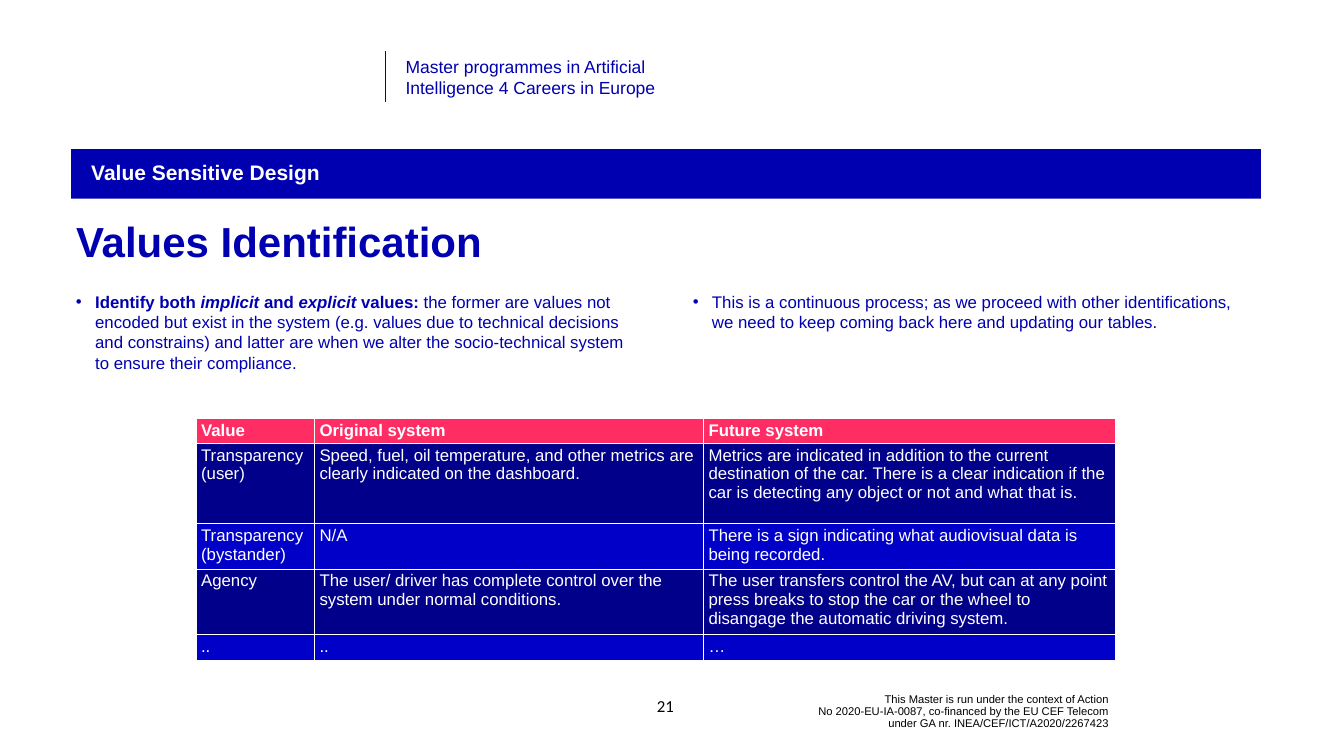
from lxml.etree import SubElement
from pptx import Presentation
from pptx.dml.color import RGBColor
from pptx.enum.shapes import MSO_CONNECTOR, MSO_SHAPE
from pptx.enum.text import MSO_ANCHOR, PP_ALIGN
from pptx.oxml.ns import qn
from pptx.util import Inches, Pt

NAVY, WHITE, BLACK, PINK = "0000B0", "FFFFFF", "000000", "FF2D64"
BANDS = ("00008A", "0100C8")
WIDTHS = (2.35, 7.72, 8.18)
HEIGHTS = (0.47, 1.59, 0.84, 1.23, 0.47)
ROWS = (
    ("Value", "Original system", "Future system"),
    ("Transparency (user)",
     "Speed, fuel, oil temperature, and other metrics are clearly indicated on the dashboard.",
     "Metrics are indicated in addition to the current destination of the car. There is a clear "
     "indication if the car is detecting any object or not and what that is."),
    ("Transparency (bystander)", "N/A",
     "There is a sign indicating what audiovisual data is being recorded."),
    ("Agency",
     "The user/ driver has complete control over the system under normal conditions.",
     "The user transfers control the AV, but can at any point press breaks to stop the car or "
     "the wheel to disangage the automatic driving system."),
    ("..", "..", "…"),
)
VALUES = (
    ("Identify both ", True, False),
    ("implicit", True, True),
    (" and ", True, False),
    ("explicit", True, True),
    (" values: ", True, False),
    ("the former are values not encoded but exist in the system (e.g. values due to technical "
     "decisions and constrains) and latter are when we alter the socio-technical system to "
     "ensure their compliance.", False, False),
)
PROCESS = (
    ("This is a continuous process; as we proceed with other identifications, we need to keep "
     "coming back here and updating our tables.", False, False),
)


def color(code):
    return RGBColor.from_string(code)


class Deck:
    """Holds the style and the current slide."""

    def __init__(self, slide, face="Arial", ink=NAVY):
        self.slide, self.face, self.ink = slide, face, ink

    def style(self, para, size, ink=None, bold=None, face=None):
        font = para.font
        font.size, font.name = Pt(size), face or self.face
        font.color.rgb = color(ink or self.ink)
        font.bold = bold

    def text(self, box, words, size, ink=None, bold=None, face=None,
             align=PP_ALIGN.LEFT, anchor=MSO_ANCHOR.TOP, space=None):
        shape = self.slide.shapes.add_textbox(*map(Inches, box))
        self.label(shape.text_frame, words, size, ink, bold, face, align, anchor, space)

    def label(self, frame, words, size, ink, bold, face, align, anchor, space):
        frame.word_wrap, frame.vertical_anchor = True, anchor
        para = frame.paragraphs[0]
        para.text, para.alignment, para.line_spacing = words, align, space
        self.style(para, size, ink, bold, face)

    def band(self, box, words, size):
        shape = self.slide.shapes.add_shape(MSO_SHAPE.RECTANGLE, *map(Inches, box))
        shape.shadow.inherit = False
        shape.fill.solid()
        shape.fill.fore_color.rgb = color(self.ink)
        shape.line.fill.background()
        shape.text_frame.margin_left = Inches(0.4)
        self.label(shape.text_frame, words, size, WHITE, True, None,
                   PP_ALIGN.LEFT, MSO_ANCHOR.MIDDLE, 0.9)

    def bullet(self, box, runs, size):
        frame = self.slide.shapes.add_textbox(*map(Inches, box)).text_frame
        frame.word_wrap = True
        para = frame.paragraphs[0]
        props = para._p.get_or_add_pPr()
        props.set("marL", str(Inches(0.38)))
        props.set("indent", str(Inches(-0.38)))
        SubElement(props, qn("a:buFont"), typeface=self.face)
        SubElement(props, qn("a:buChar"), char="•")
        self.style(para, size)
        for words, bold, slant in runs:
            run = para.add_run()
            run.text, run.font.bold, run.font.italic = words, bold, slant

    def line(self, ends, width):
        rule = self.slide.shapes.add_connector(MSO_CONNECTOR.STRAIGHT, *map(Inches, ends))
        rule.line.color.rgb, rule.line.width = color(self.ink), Pt(width)
        SubElement(rule._element.spPr, qn("a:effectLst"))

    def edge(self, cell, side, width):
        props = cell._tc.get_or_add_tcPr()
        rule = SubElement(props, qn("a:ln" + side), w=str(Pt(width)))
        fill = SubElement(rule, qn("a:solidFill"))
        SubElement(fill, qn("a:srgbClr"), val=WHITE)

    def table(self, left, top, widths, heights, rows, size):
        box = map(Inches, (left, top, sum(widths), sum(heights)))
        grid = self.slide.shapes.add_table(len(rows), len(widths), *box).table
        for col, width in zip(grid.columns, widths):
            col.width = Inches(width)
        for i, (row, height, words) in enumerate(zip(grid.rows, heights, rows)):
            row.height = Inches(height)
            for cell, value in zip(row.cells, words):
                for side in "LRTB":
                    thick = (i, side) in ((0, "B"), (1, "T"))
                    self.edge(cell, side, 3 if thick else 1)
                cell.fill.solid()
                cell.fill.fore_color.rgb = color(BANDS[(i - 1) % 2] if i else PINK)
                cell.text = value
                self.style(cell.text_frame.paragraphs[0], size, WHITE, i == 0)


def main():
    show = Presentation()
    show.slide_width, show.slide_height = Inches(26.67), Inches(15)
    deck = Deck(show.slides.add_slide(show.slide_layouts[6]))
    deck.text((15.02, 13.74, 7.08, 0.76),
              "This Master is run under the context of Action\n"
              "No 2020-EU-IA-0087, co-financed by the EU CEF Telecom\n"
              "under GA nr. INEA/CEF/ICT/A2020/2267423",
              16, BLACK, align=PP_ALIGN.RIGHT, anchor=MSO_ANCHOR.MIDDLE, space=0.9)
    deck.line((7.65, 1.01, 7.65, 2.03), 0.5)
    deck.text((7.95, 1.06, 6.37, 0.94),
              "Master programmes in Artificial\nIntelligence 4 Careers in Europe", 25)
    deck.band((1.41, 2.96, 23.61, 0.98), "Value Sensitive Design", 30)
    for left, runs in ((1.41, VALUES), (13.65, PROCESS)):
        deck.bullet((left, 5.74, 11.37, 7.06), runs, 24)
    deck.text((1.41, 4.26, 23.61, 1.24), "Values Identification", 60, bold=True, space=Pt(70))
    deck.text((12.65, 13.61, 1.11, 0.8), "21", 24, BLACK, face="Calibri",
              align=PP_ALIGN.CENTER, anchor=MSO_ANCHOR.MIDDLE)
    deck.table(3.89, 8.3, WIDTHS, HEIGHTS, ROWS, 24)
    show.save("out.pptx")


if __name__ == "__main__":
    main()
